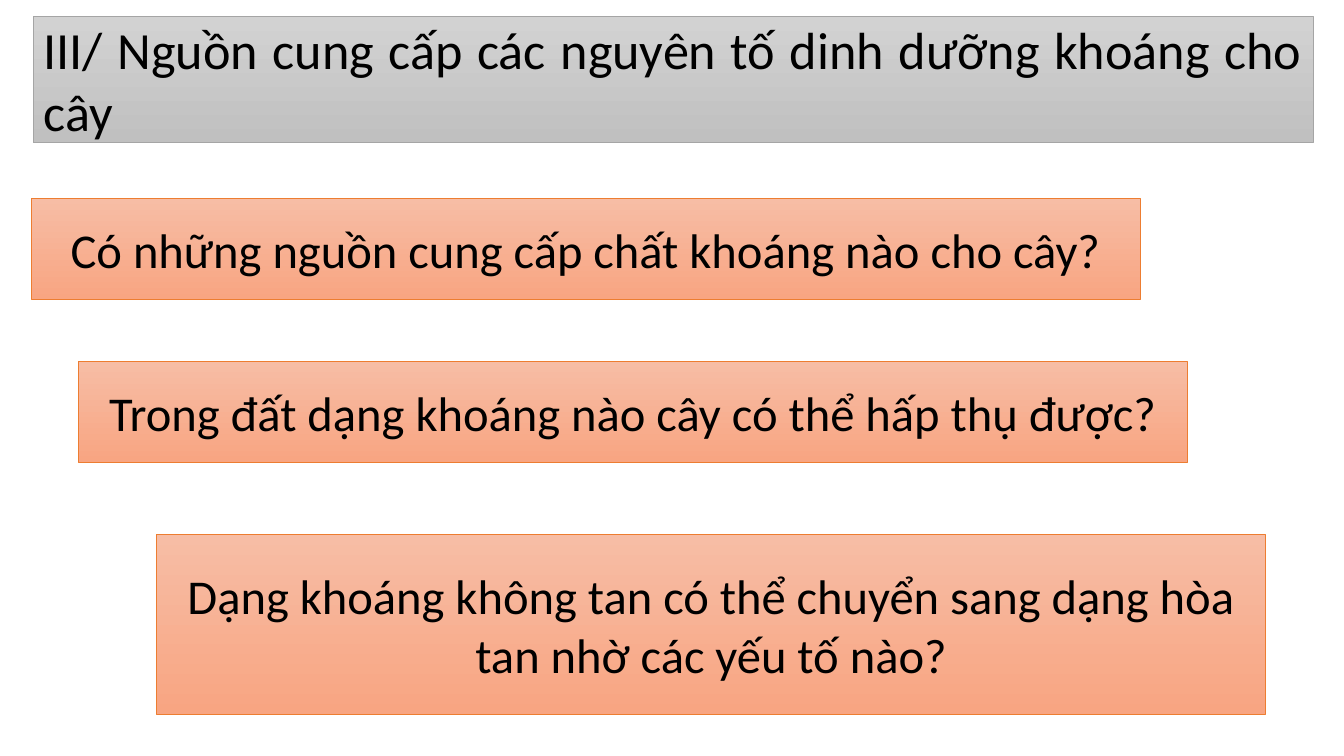
from dataclasses import dataclass

from pptx import Presentation
from pptx.dml.color import RGBColor
from pptx.enum.shapes import MSO_SHAPE
from pptx.enum.text import MSO_ANCHOR, MSO_AUTO_SIZE, PP_ALIGN
from pptx.util import Pt

RECTANGLE = MSO_SHAPE.RECTANGLE
MIDDLE = MSO_ANCHOR.MIDDLE
NO_AUTOFIT = MSO_AUTO_SIZE.NONE
CENTER = PP_ALIGN.CENTER
JUSTIFY = PP_ALIGN.JUSTIFY

FONT = "Calibri"
TITLE_ONLY_LAYOUT = 5
QUESTION_WIDTH = 792


@dataclass(frozen=True)
class BoxStyle:
    top_color: str
    bottom_color: str
    line_color: str
    font_size: float
    alignment: PP_ALIGN


@dataclass(frozen=True)
class Box:
    text: str
    left: float
    top: float
    width: float
    height: float


HEADING_STYLE = BoxStyle("D2D2D2", "C0C0C0", "A5A5A5", 37.3, JUSTIFY)
QUESTION_STYLE = BoxStyle("F7BDA5", "F8A582", "ED7D31", 34.7, CENTER)

HEADING = Box("III/ Nguồn cung cấp các nguyên tố dinh dưỡng khoáng cho cây",
              23.8, 12, 914.4, 90)
QUESTIONS = [
    Box("Có những nguồn cung cấp chất khoáng nào cho cây?",
        22.3, 141.8, QUESTION_WIDTH, 72),
    Box("Trong đất dạng khoáng nào cây có thể hấp thụ được?",
        56, 258, QUESTION_WIDTH, 72),
    Box("Dạng khoáng không tan có thể chuyển sang dạng hòa tan nhờ các yếu tố nào?",
        112, 382, QUESTION_WIDTH, 128.2),
]


def color(hex_value: str) -> RGBColor:
    return RGBColor.from_string(hex_value)


def format_box(shape, box: Box, style: BoxStyle) -> None:
    """Place a shape, give it a vertical gradient and write its text."""
    shape.left, shape.top = Pt(box.left), Pt(box.top)
    shape.width, shape.height = Pt(box.width), Pt(box.height)

    # Fill and outline
    shape.fill.gradient()
    shape.fill.gradient_angle = 270
    stops = shape.fill.gradient_stops
    for stop, hex_value in zip(stops, (style.top_color, style.bottom_color)):
        stop.color.rgb = color(hex_value)
    shape.line.color.rgb = color(style.line_color)
    shape.line.width = Pt(0.5)

    # Text
    frame = shape.text_frame
    frame.text = box.text
    frame.word_wrap = True
    frame.auto_size = NO_AUTOFIT
    frame.vertical_anchor = MIDDLE
    paragraph = frame.paragraphs[0]
    paragraph.alignment = style.alignment
    paragraph.font.name = FONT
    paragraph.font.size = Pt(style.font_size)
    paragraph.font.color.rgb = color("000000")


def add_question(slide, box: Box) -> None:
    shape = slide.shapes.add_shape(RECTANGLE, Pt(box.left), Pt(box.top),
                                   Pt(box.width), Pt(box.height))
    shape.shadow.inherit = False
    format_box(shape, box, QUESTION_STYLE)


def main() -> None:
    presentation = Presentation()
    presentation.slide_width, presentation.slide_height = Pt(960), Pt(540)
    layout = presentation.slide_layouts[TITLE_ONLY_LAYOUT]
    slide = presentation.slides.add_slide(layout)

    # Section heading
    format_box(slide.shapes.title, HEADING, HEADING_STYLE)

    # Questions
    for question in QUESTIONS:
        add_question(slide, question)

    presentation.save("out.pptx")


if __name__ == "__main__":
    main()
